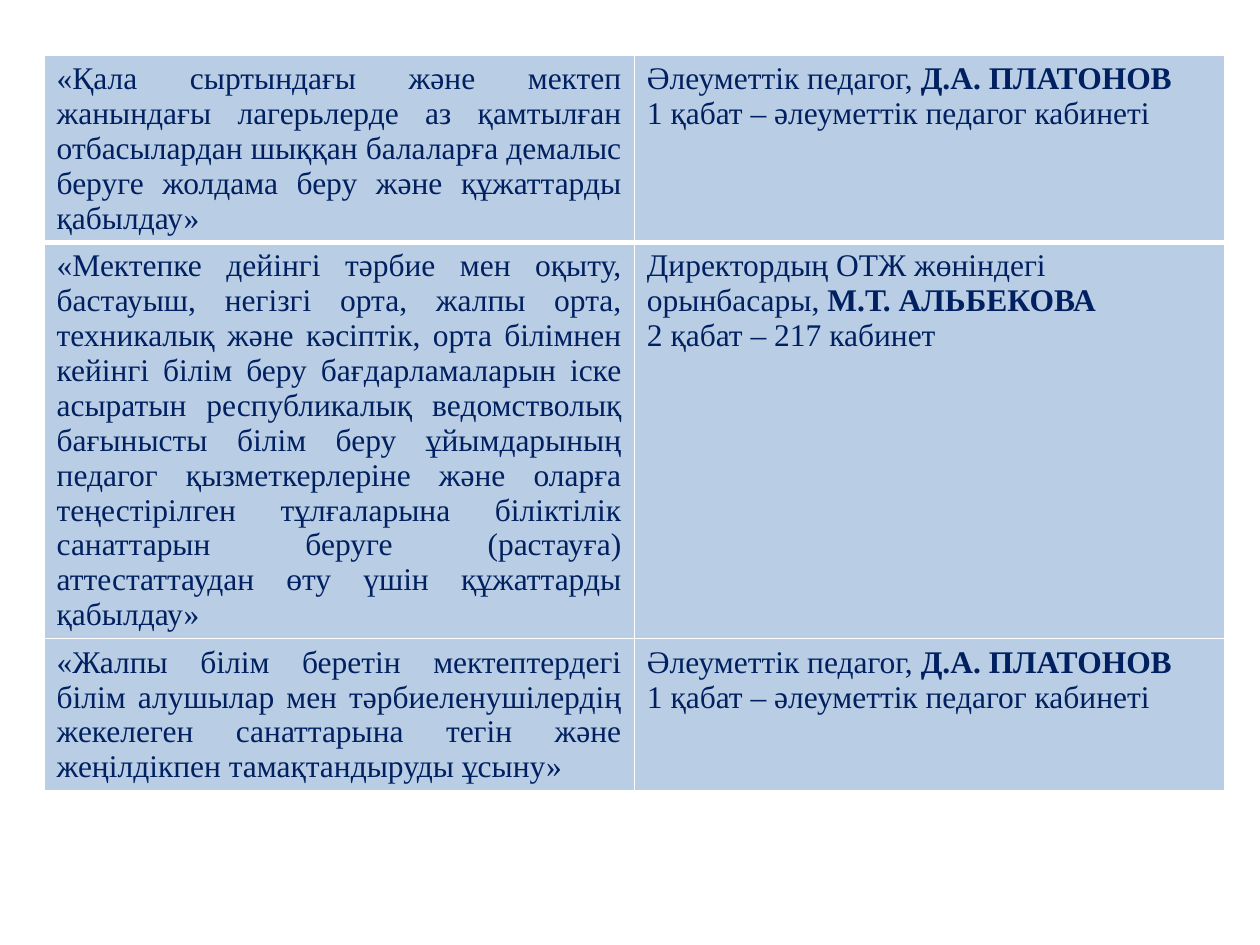
from pptx import Presentation
from pptx.dml.color import RGBColor as RGB
from pptx.enum.text import PP_ALIGN as Align
from pptx.oxml.ns import qn
from pptx.util import Inches, Pt
from lxml.etree import SubElement as Sub

NAVY = RGB(0x00, 0x20, 0x60)
BLUE = RGB(0xB9, 0xCD, 0xE5)
WHITE = RGB(0xFF, 0xFF, 0xFF)

SOCIAL = ("Әлеуметтік педагог, ", "Д.А. ПЛАТОНОВ",
          "1 қабат – әлеуметтік педагог кабинеті")
DEPUTY = ("Директордың ОТЖ жөніндегі орынбасары, ", "М.Т. АЛЬБЕКОВА",
          "2 қабат – 217 кабинет")
ROWS = [
    ("«Қала сыртындағы және мектеп жанындағы лагерьлерде аз қамтылған "
     "отбасылардан шыққан балаларға демалыс беруге жолдама беру және "
     "құжаттарды қабылдау»", SOCIAL),
    ("«Мектепке дейінгі тәрбие мен оқыту, бастауыш, негізгі орта, жалпы орта, "
     "техникалық және кәсіптік, орта білімнен кейінгі білім беру "
     "бағдарламаларын іске асыратын республикалық ведомстволық бағынысты "
     "білім беру ұйымдарының педагог қызметкерлеріне және оларға "
     "теңестірілген тұлғаларына біліктілік санаттарын беруге (растауға) "
     "аттестаттаудан өту үшін құжаттарды қабылдау»", DEPUTY),
    ("«Жалпы білім беретін мектептердегі білім алушылар мен "
     "тәрбиеленушілердің жекелеген санаттарына тегін және жеңілдікпен "
     "тамақтандыруды ұсыну»", SOCIAL),
]
FONT = {"name": "Times New Roman", "size": Pt(18)}


def add_run(para, text, bold=False):
    run = para.add_run()
    run.text = text
    for key, value in {**FONT, "bold": bold}.items():
        setattr(run.font, key, value)
    run.font.color.rgb = NAVY


def set_edges(cell, widths):
    props = cell._tc.get_or_add_tcPr()
    for spot, (side, width) in enumerate(widths.items()):
        line = Sub(props, qn("a:" + side), w=str(Pt(width)))
        fill = Sub(line, qn("a:solidFill"))
        Sub(fill, qn("a:srgbClr"), val=str(WHITE))
        props.insert(spot, line)


def main():
    deck = Presentation()
    deck.slide_width, deck.slide_height = Inches(10), Inches(7.5)
    slide = deck.slides.add_slide(deck.slide_layouts[6])
    frame = slide.shapes.add_table(len(ROWS), 2, Inches(0.35), Inches(0.44),
                                   Inches(9.37), Inches(6.3))
    table = frame.table
    for row in table.rows:
        row.height = Inches(0.96)
    frame.height = Inches(6.3)

    for index, (service, (post, name, room)) in enumerate(ROWS):
        left, right = table.rows[index].cells
        para = left.text_frame.paragraphs[0]
        para.alignment = Align.JUSTIFY
        add_run(para, service)
        para = right.text_frame.paragraphs[0]
        add_run(para, post)
        add_run(para, name, bold=True)
        add_run(right.text_frame.add_paragraph(), room)
        edges = {"lnL": 1, "lnR": 1, "lnT": 3 if index == 1 else 1,
                 "lnB": 3 if index == 0 else 1}
        for cell in (left, right):
            cell.fill.solid()
            cell.fill.fore_color.rgb = BLUE
            set_edges(cell, edges)

    deck.save("out.pptx")


if __name__ == "__main__":
    main()
